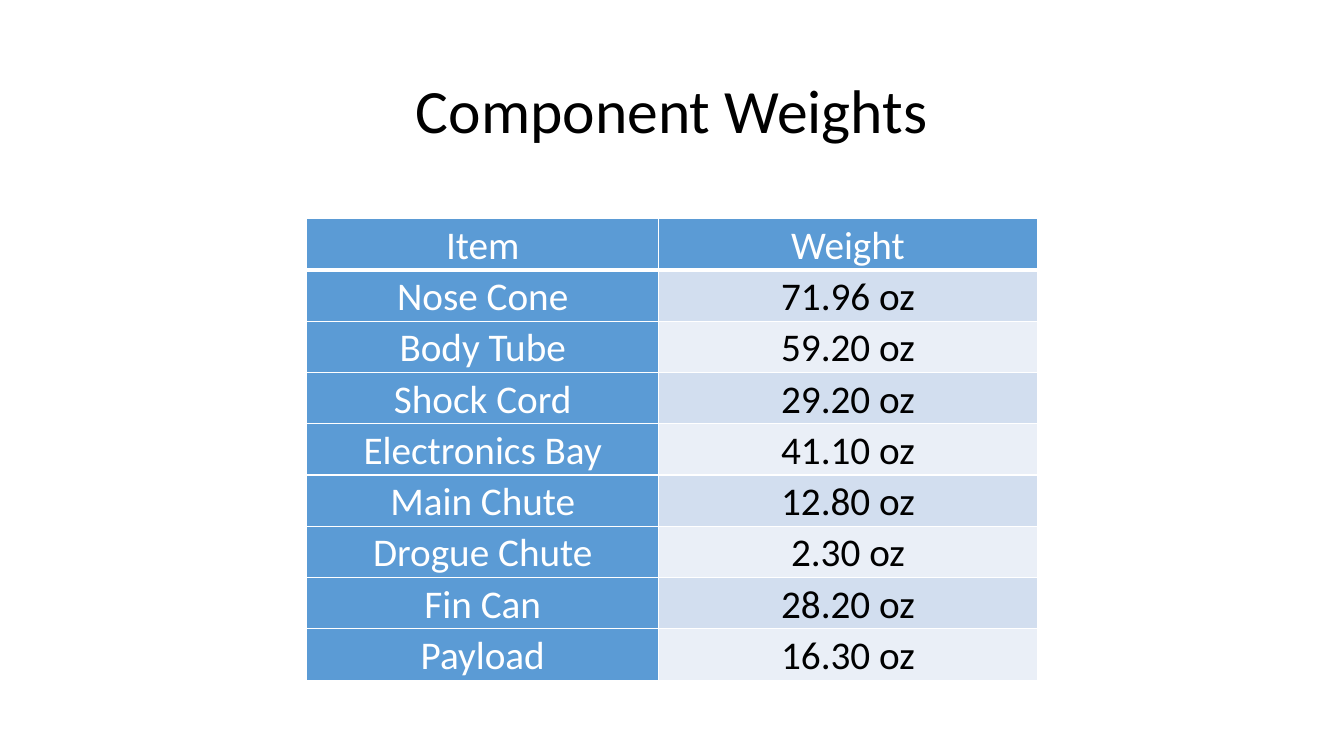
import pptx
import pptx.dml.color
import pptx.enum.text
import pptx.oxml.ns
import pptx.util
from lxml import etree

Pt = pptx.util.Pt
CENTER = pptx.enum.text.PP_ALIGN.CENTER
MIDDLE = pptx.enum.text.MSO_ANCHOR.MIDDLE

WEIGHTS = [
    ("Item", "Weight"),
    ("Nose Cone", "71.96 oz"),
    ("Body Tube", "59.20 oz"),
    ("Shock Cord", "29.20 oz"),
    ("Electronics Bay", "41.10 oz"),
    ("Main Chute", "12.80 oz"),
    ("Drogue Chute", "2.30 oz"),
    ("Fin Can", "28.20 oz"),
    ("Payload", "16.30 oz"),
]


def color(value):
    return pptx.dml.color.RGBColor.from_string(value)


class WeightSlide:
    font = "Calibri"
    black = "000000"
    white = "FFFFFF"
    accent = "5B9BD5"
    bands = ("D2DEEF", "EAEFF7")

    def __init__(self, deck):
        self.page = deck.slides.add_slide(deck.slide_layouts[5])

    def label(self, frame, text, size, ink, spacing):
        frame.text = text
        para = frame.paragraphs[0]
        para.alignment = CENTER
        para.line_spacing = spacing
        span = para.runs[0]
        span.font.name = self.font
        span.font.size = Pt(size)
        span.font.color.rgb = color(ink)

    def title(self, text, left, top, width, height):
        box = self.page.shapes.title
        box.left, box.top = Pt(left), Pt(top)
        box.width, box.height = Pt(width), Pt(height)
        self.label(box.text_frame, text, 44, self.black, 0.9)
        box.text_frame.vertical_anchor = MIDDLE

    def border(self, cell, side, width):
        properties = cell._tc.get_or_add_tcPr()
        line = etree.SubElement(properties, pptx.oxml.ns.qn(f"a:ln{side}"), w=str(Pt(width)))
        fill = etree.SubElement(line, pptx.oxml.ns.qn("a:solidFill"))
        etree.SubElement(fill, pptx.oxml.ns.qn("a:srgbClr"), val=self.white)

    def cell(self, cell, text, row, column):
        heading = row == 0 or column == 0
        cell.margin_left = cell.margin_right = Pt(5)
        cell.margin_top = cell.margin_bottom = 0
        for side in "LRTB":
            self.border(cell, side, 3 if row == 0 and side == "B" else 1)
        cell.fill.solid()
        cell.fill.fore_color.rgb = color(self.accent if heading else self.bands[(row - 1) % 2])
        self.label(cell.text_frame, text, 28, self.white if heading else self.black, 1.07)

    def table(self, rows, left, top, widths, row_height):
        table = self.page.shapes.add_table(
            len(rows), len(widths), Pt(left), Pt(top),
            Pt(sum(widths)), Pt(row_height * len(rows))).table
        table.first_col = True
        for column, width in zip(table.columns, widths):
            column.width = Pt(width)
        for row, texts in enumerate(rows):
            table.rows[row].height = Pt(row_height)
            for column, text in enumerate(texts):
                self.cell(table.cell(row, column), text, row, column)


def main():
    deck = pptx.Presentation()
    deck.slide_width, deck.slide_height = Pt(960), Pt(540)
    slide = WeightSlide(deck)
    slide.title("Component Weights", 66, 28.8, 828, 104.4)
    slide.table(WEIGHTS, 219.2, 156.2, (251.2, 270.6), 36.4)
    deck.save("out.pptx")


if __name__ == "__main__":
    main()
